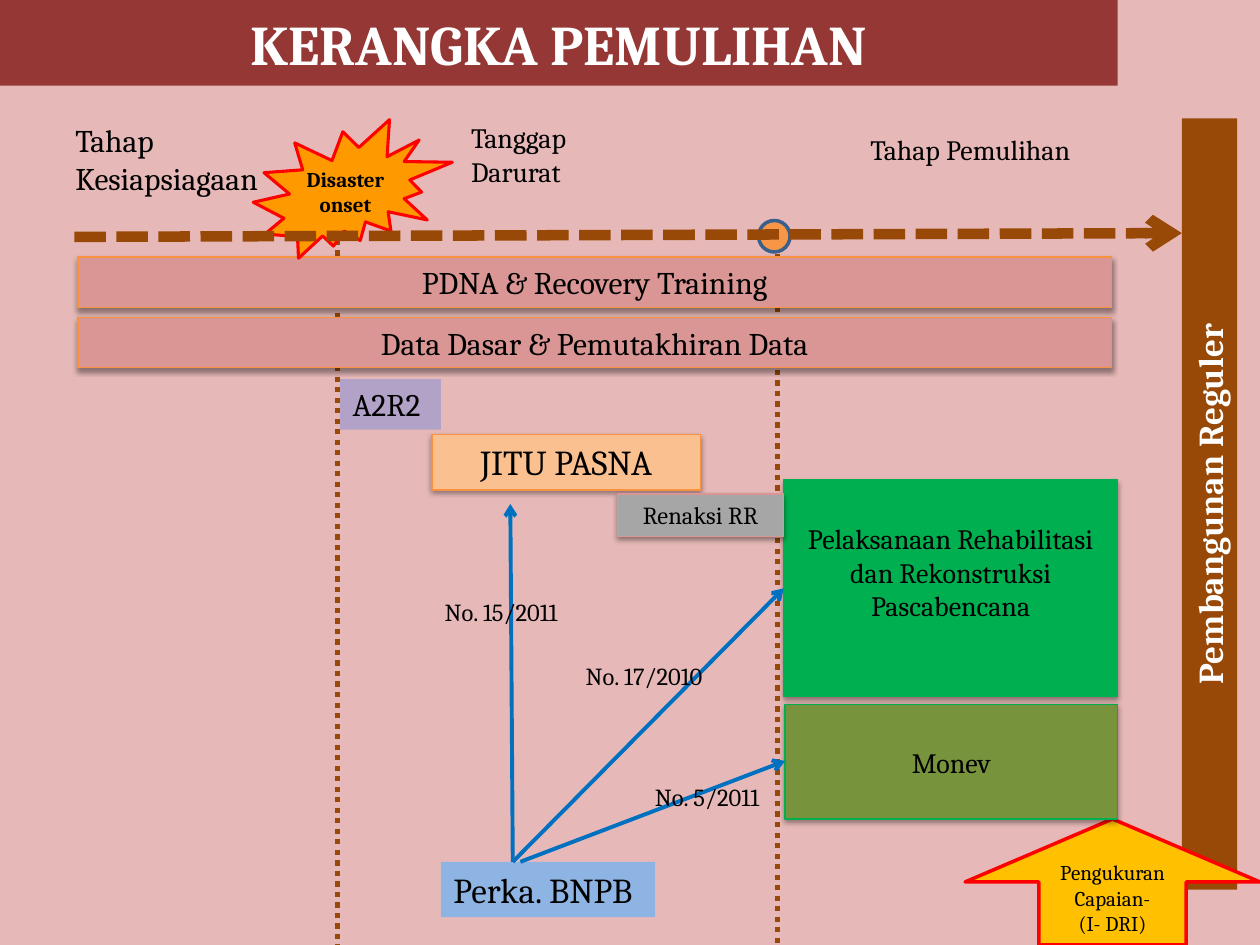
from lxml import etree
from pptx import Presentation
from pptx import util as u
from pptx.dml.color import RGBColor
from pptx.enum import shapes, text
from pptx.oxml.ns import qn

PX = 9144
SHAPE = shapes.MSO_SHAPE
ALIGN = text.PP_ALIGN
ANCHOR = text.MSO_ANCHOR
COLORS = {
    "background": "E6B9B8", "title": "953735", "brown": "984807",
    "black": "000000", "white": "FFFFFF", "rose": "D99694",
    "orange_line": "F69240", "peach": "FAC090", "burst": "FF9900",
    "red": "FF0000", "green": "00B050", "node": "F79646",
    "node_line": "3A5F8C", "gray": "A6A6A6", "gold": "FFC000",
    "sky": "8EB4E3", "blue": "0070C0", "olive": "77933C", "violet": "B3A2C7",
}


def rgb(name):
    return RGBColor.from_string(COLORS[name])


class SlideBuilder:
    font = "Cambria"

    def __init__(self, prs):
        self.slide = prs.slides.add_slide(prs.slide_layouts[5])
        fill = self.slide.background.fill
        fill.solid()
        fill.fore_color.rgb = rgb("background")

    def set_text(self, s, lines, size, color="black", bold=False,
                 align=ALIGN.CENTER, anchor=ANCHOR.TOP, wrap=True, insets=None):
        tf = s.text_frame
        tf.auto_size = text.MSO_AUTO_SIZE.NONE
        tf.word_wrap = wrap
        tf.vertical_anchor = anchor
        if insets:
            (tf.margin_left, tf.margin_top,
             tf.margin_right, tf.margin_bottom) = [v * PX for v in insets]
        for i, line in enumerate(lines.split("\n")):
            p = tf.paragraphs[0] if i == 0 else tf.add_paragraph()
            p.text = line
            p.alignment = align
            p.font.name = self.font
            p.font.size = u.Pt(size)
            p.font.bold = bold
            p.font.color.rgb = rgb(color)

    def title(self, box, words):
        s = self.slide.shapes.title
        s.left, s.top, s.width, s.height = [v * PX for v in box]
        s.fill.solid()
        s.fill.fore_color.rgb = rgb("title")
        self.set_text(s, words, 32, "white", True, anchor=ANCHOR.MIDDLE)

    def label(self, box, words, size, wrap=True):
        s = self.slide.shapes.add_textbox(*[v * PX for v in box])
        self.set_text(s, words, size, align=ALIGN.LEFT, wrap=wrap)

    def shape(self, box, fill, words="", size=18, kind=SHAPE.RECTANGLE,
              line=None, weight=0.75, shadow=False, rotation=0, **style):
        s = self.slide.shapes.add_shape(kind, *[v * PX for v in box])
        s.rotation = rotation
        s.fill.solid()
        s.fill.fore_color.rgb = rgb(fill)
        if line:
            s.line.color.rgb = rgb(line)
            s.line.width = u.Pt(weight)
        else:
            s.line.fill.background()
        s.shadow.inherit = False
        if shadow:
            self.drop_shadow(s)
        if words:
            self.set_text(s, words, size, **style)

    def drop_shadow(self, s):
        effects = s._element.spPr.find(qn("a:effectLst"))
        outer = etree.SubElement(effects, qn("a:outerShdw"), blurRad="40000",
                                 dist="20000", dir="5400000", rotWithShape="0")
        tint = etree.SubElement(outer, qn("a:srgbClr"), val=COLORS["black"])
        etree.SubElement(tint, qn("a:alpha"), val="38000")

    def connector(self, ends, color, weight, dash=None, arrow=False):
        s = self.slide.shapes.add_connector(
            shapes.MSO_CONNECTOR.STRAIGHT, *[v * PX for v in ends])
        s.line.color.rgb = rgb(color)
        s.line.width = u.Pt(weight)
        props = s._element.spPr
        ln = props.find(qn("a:ln"))
        if dash:
            etree.SubElement(ln, qn("a:prstDash"), val=dash)
        if arrow:
            etree.SubElement(ln, qn("a:tailEnd"), type="arrow")
        etree.SubElement(props, qn("a:effectLst"))


def main():
    prs = Presentation()
    prs.slide_width, prs.slide_height = 1000 * PX, 750 * PX
    b = SlideBuilder(prs)
    b.title((0, 0, 887, 68), "KERANGKA PEMULIHAN")

    for x, top in ((617, 185), (268, 182)):
        b.connector((x, top, x, 750), "brown", 3, "sysDot")

    b.label((364, 91, 146, 64), "Tanggap Darurat", 16)
    b.label((50, 91, 176, 71), "Tahap\nKesiapsiagaan", 18)
    b.label((681, 100, 202, 37), "Tahap Pemulihan", 16)

    for top, words in ((204, "PDNA & Recovery Training"),
                       (252, "Data Dasar & Pemutakhiran Data")):
        b.shape((62, top, 820, 40), "rose", words,
                line="orange_line", shadow=True)
    b.shape((343, 345, 213, 44), "peach", "JITU PASNA", 20,
            line="orange_line", shadow=True)
    b.shape((201, 95, 158, 110), "burst", "Disaster onset", 12,
            SHAPE.EXPLOSION2, "red", 1.75, bold=True,
            anchor=ANCHOR.MIDDLE, insets=(0, 0, 0, 0))
    b.shape((622, 381, 265, 172), "green",
            "Pelaksanaan Rehabilitasi dan Rekonstruksi Pascabencana", 16,
            line="green", shadow=True, insets=(10, 33, 10, 5))
    b.shape((654, 378, 612, 44), "brown", "Pembangunan Reguler", 20,
            rotation=270, color="white", bold=True)

    b.shape((602, 175, 25, 25), "node", kind=SHAPE.FLOWCHART_CONNECTOR,
            line="node_line", weight=2)
    b.connector((59, 188, 938, 185), "brown", 6, "sysDash", True)

    b.shape((490, 392, 132, 34), "gray", "Renaksi RR", 14,
            line="rose", shadow=True)
    b.shape((766, 650, 234, 100), "gold", "Pengukuran Capaian-\n(I- DRI)", 12,
            SHAPE.UP_ARROW, "red", 2, anchor=ANCHOR.MIDDLE)
    b.shape((350, 684, 170, 44), "sky", "Perka. BNPB", 20,
            align=ALIGN.LEFT, wrap=False)
    b.shape((623, 559, 264, 91), "olive", "Monev", 16,
            line="green", shadow=True, insets=(10, 33, 10, 5))

    for ends in ((407, 684, 405, 400), (407, 684, 622, 467),
                 (413, 684, 623, 604)):
        b.connector(ends, "blue", 2.25, arrow=True)
    for x, y, width, words in ((343, 469, 127, "No. 15/2011"),
                               (455, 520, 127, "No. 17/2010"),
                               (510, 616, 116, "No. 5/2011")):
        b.label((x, y, width, 34), words, 14, wrap=False)
    b.shape((270, 301, 80, 40), "violet", "A2R2", 18,
            align=ALIGN.LEFT, wrap=False)

    prs.save("out.pptx")


if __name__ == "__main__":
    main()
